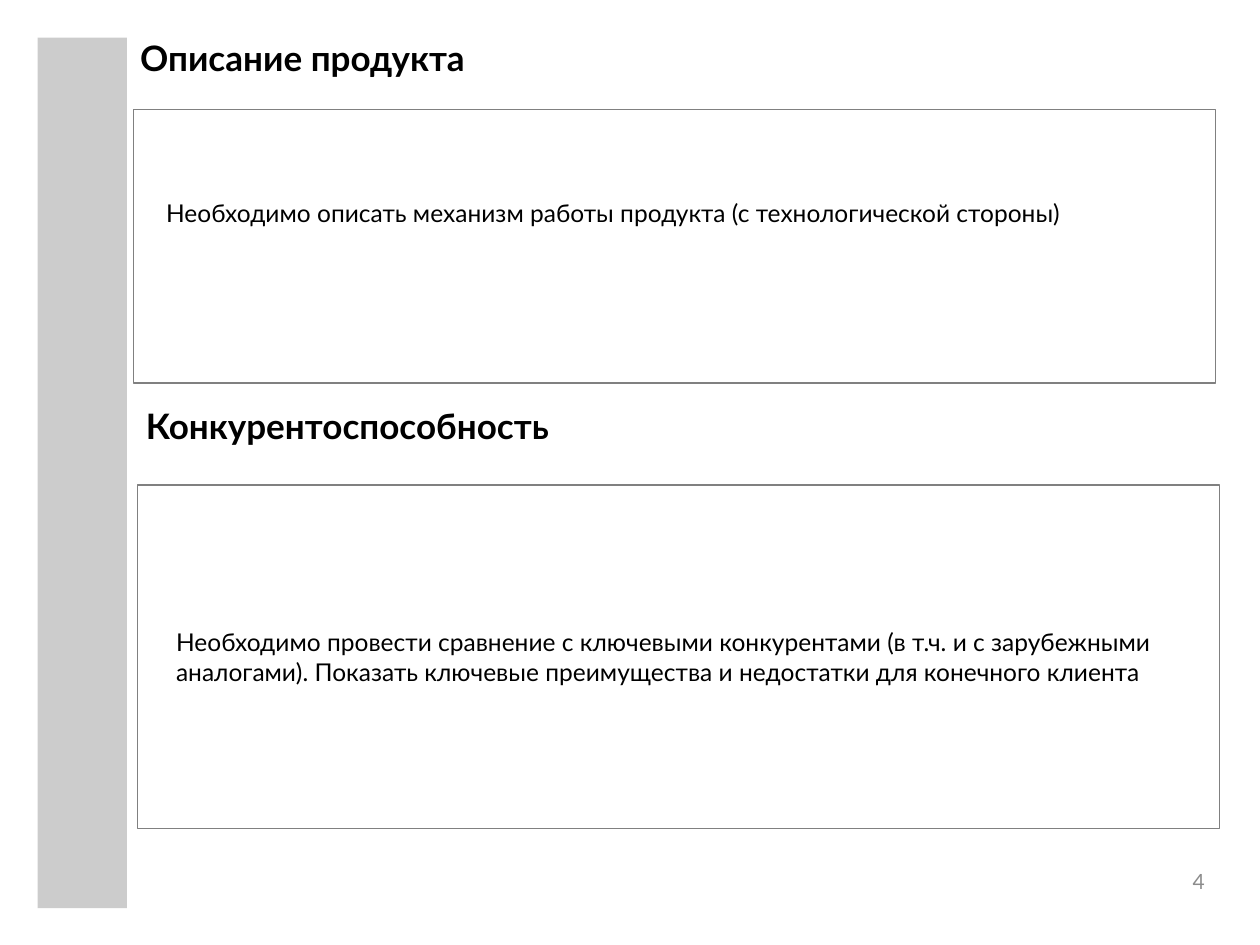
from dataclasses import dataclass

from pptx import Presentation
from pptx.dml.color import RGBColor
from pptx.enum.shapes import MSO_SHAPE
from pptx.enum.text import MSO_ANCHOR, MSO_AUTO_SIZE, PP_ALIGN
from pptx.util import Cm, Pt

RECTANGLE = MSO_SHAPE.RECTANGLE
TOP, MIDDLE = MSO_ANCHOR.TOP, MSO_ANCHOR.MIDDLE
LEFT, RIGHT = PP_ALIGN.LEFT, PP_ALIGN.RIGHT
NO_AUTOFIT, GROW = MSO_AUTO_SIZE.NONE, MSO_AUTO_SIZE.SHAPE_TO_FIT_TEXT

BLACK = RGBColor(0x00, 0x00, 0x00)
BAND_GRAY = RGBColor(0xCC, 0xCC, 0xCC)
FRAME_GRAY = RGBColor(0x80, 0x80, 0x80)
NUMBER_GRAY = RGBColor(0x8C, 0x8C, 0x8C)

HEADING_FONT = {"name": "Lato", "size": Pt(20), "bold": True}
BODY_FONT = {"name": "Lato", "size": Pt(14), "bold": False}
NUMBER_FONT = {"name": "Lato", "size": Pt(12), "bold": False}


@dataclass(frozen=True)
class Area:
    """Position and size in centimetres."""
    left: float
    top: float
    width: float
    height: float

    def lengths(self) -> tuple:
        return Cm(self.left), Cm(self.top), Cm(self.width), Cm(self.height)


@dataclass(frozen=True)
class Section:
    heading: str
    heading_area: Area
    frame_area: Area
    body: str
    body_area: Area


SECTIONS = [
    Section(
        "Описание продукта",
        Area(2.57, 0.61, 23.39, 1.73),
        Area(2.69, 2.21, 21.82, 5.51),
        "Необходимо описать механизм работы продукта (с технологической стороны)",
        Area(3.1, 3.86, 21, 0.86),
    ),
    Section(
        "Конкурентоспособность",
        Area(2.69, 8.03, 23.39, 1.73),
        Area(2.77, 9.78, 21.82, 6.93),
        "Необходимо провести сравнение с ключевыми конкурентами (в т.ч. и с зарубежными "
        "аналогами). Показать ключевые преимущества и недостатки для конечного клиента",
        Area(3.3, 12.52, 21, 1.45),
    ),
]


def add_rectangle(slide, area: Area, fill: RGBColor | None = None,
                  line: RGBColor | None = None) -> None:
    shape = slide.shapes.add_shape(RECTANGLE, *area.lengths())
    shape.shadow.inherit = False
    if fill is None:
        shape.fill.background()
    else:
        shape.fill.solid()
        shape.fill.fore_color.rgb = fill
    if line is None:
        shape.line.fill.background()
    else:
        shape.line.color.rgb = line
        shape.line.width = Pt(0.75)


def write_text(shape, text: str, font: dict, color: RGBColor = BLACK,
               alignment: PP_ALIGN = LEFT, **frame_format) -> None:
    frame = shape.text_frame
    frame.text = text
    settings = {"word_wrap": True, "auto_size": NO_AUTOFIT, "vertical_anchor": TOP}
    for name, value in (settings | frame_format).items():
        setattr(frame, name, value)
    paragraph = frame.paragraphs[0]
    paragraph.alignment = alignment
    for name, value in font.items():
        setattr(paragraph.font, name, value)
    paragraph.font.color.rgb = color


def add_text(slide, area: Area, text: str, font: dict, **text_format) -> None:
    write_text(slide.shapes.add_textbox(*area.lengths()), text, font, **text_format)


def place_title(slide, section: Section) -> None:
    title = slide.shapes.title
    title.left, title.top, title.width, title.height = section.heading_area.lengths()
    write_text(title, section.heading, HEADING_FONT)


def main() -> None:
    presentation = Presentation()
    presentation.slide_width, presentation.slide_height = Cm(25.4), Cm(19.05)
    slide = presentation.slides.add_slide(presentation.slide_layouts[5])

    # Side band
    add_rectangle(slide, Area(0.76, 0.76, 1.8, 17.55), fill=BAND_GRAY)

    # Framed sections, the first one headed by the slide title
    for index, section in enumerate(SECTIONS):
        if index == 0:
            place_title(slide, section)
        else:
            add_text(slide, section.heading_area, section.heading, HEADING_FONT)
        add_rectangle(slide, section.frame_area, line=FRAME_GRAY)
        add_text(slide, section.body_area, section.body, BODY_FONT, auto_size=GROW)

    # Slide number
    add_text(slide, Area(23.29, 17.2, 1, 1), "4", NUMBER_FONT, color=NUMBER_GRAY,
             alignment=RIGHT, vertical_anchor=MIDDLE, margin_right=0, margin_bottom=0)

    presentation.save("out.pptx")


if __name__ == "__main__":
    main()
